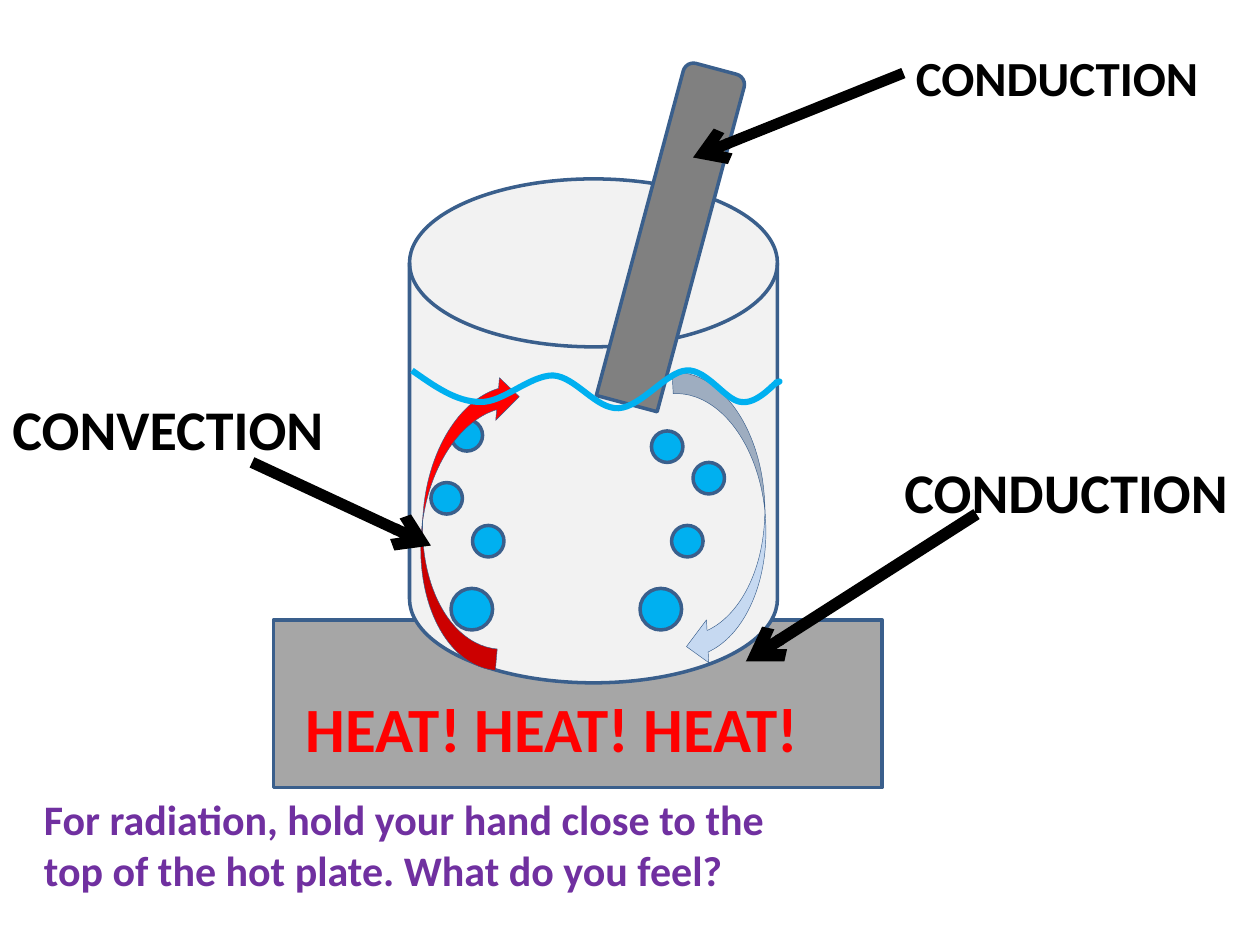
from typing import NamedTuple

from lxml.etree import SubElement
from pptx import Presentation
from pptx.dml.color import RGBColor
from pptx.enum.shapes import MSO_CONNECTOR, MSO_SHAPE
from pptx.enum.text import MSO_AUTO_SIZE
from pptx.oxml.ns import qn
from pptx.util import Inches, Pt

OUTLINE, WATER, BLACK = "3A5F8C", "00B0F0", "000000"


class Part(NamedTuple):
    kind: MSO_SHAPE
    left: float
    top: float
    width: float
    height: float
    fill: str
    rotation: float = 0
    line_width: float = 2


class Pointer(NamedTuple):
    start: tuple[float, float]
    end: tuple[float, float]
    width: float


class Label(NamedTuple):
    text: str
    left: float
    top: float
    width: float
    height: float
    size: float
    color: str = BLACK


def rgb(color: str) -> RGBColor:
    return RGBColor.from_string(color)


def set_line(shape, color: str, width: float) -> None:
    shape.line.color.rgb = rgb(color)
    shape.line.width = Pt(width)


def draw_part(slide, part: Part) -> None:
    box = map(Inches, (part.left, part.top, part.width, part.height))
    shape = slide.shapes.add_shape(part.kind, *box)
    shape.rotation = part.rotation
    shape.shadow.inherit = False
    shape.fill.solid()
    shape.fill.fore_color.rgb = rgb(part.fill)
    set_line(shape, OUTLINE, part.line_width)


def draw_pointer(slide, pointer: Pointer) -> None:
    ends = map(Inches, (*pointer.start, *pointer.end))
    connector = slide.shapes.add_connector(MSO_CONNECTOR.STRAIGHT, *ends)
    set_line(connector, BLACK, pointer.width)
    SubElement(connector.line._get_or_add_ln(), qn("a:tailEnd"), type="arrow")
    SubElement(connector._element.spPr, qn("a:effectLst"))


def draw_label(slide, label: Label) -> None:
    box = map(Inches, (label.left, label.top, label.width, label.height))
    frame = slide.shapes.add_textbox(*box).text_frame
    frame.word_wrap = True
    frame.auto_size = MSO_AUTO_SIZE.SHAPE_TO_FIT_TEXT
    run = frame.paragraphs[0].add_run()
    run.text = label.text
    font_format = {"name": "Calibri", "size": Pt(label.size), "bold": True}
    for name, value in font_format.items():
        setattr(run.font, name, value)
    run.font.color.rgb = rgb(label.color)


def curve_points(start, segments, steps: int = 16) -> list[tuple[float, float]]:
    """Points along a chain of cubic curves."""
    points = [start]
    for first, second, end in segments:
        for step in range(1, steps + 1):
            t = step / steps
            weights = ((1 - t) ** 3, 3 * t * (1 - t) ** 2, 3 * t**2 * (1 - t), t**3)
            corners = (start, first, second, end)
            points.append(tuple(
                sum(w * corner[axis] for w, corner in zip(weights, corners))
                for axis in (0, 1)
            ))
        start = end
    return points


def draw_wave(slide, start, segments) -> None:
    points = curve_points(start, segments)
    scaled = [(Inches(x), Inches(y)) for x, y in points]
    builder = slide.shapes.build_freeform(*scaled[0])
    builder.add_line_segments(scaled[1:], close=False)
    wave = builder.convert_to_shape()
    wave.shadow.inherit = False
    wave.fill.background()
    set_line(wave, WATER, 3.5)


HOT_PLATE = Part(MSO_SHAPE.RECTANGLE, 2.17, 4.92, 4.83, 1.33, "A6A6A6")
BEAKER = Part(MSO_SHAPE.FLOWCHART_MAGNETIC_DISK, 3.25, 1.42, 2.92, 4, "F2F2F2")
ROD = Part(MSO_SHAPE.ROUND_2_SAME_RECTANGLE, 5.08, 0.5, 0.5, 2.75, "808080", 15)
CURRENTS = [
    Part(MSO_SHAPE.CURVED_DOWN_ARROW, 2.52, 3.78, 2.35, 0.68, "FF0000", 275, 0.25),
    Part(MSO_SHAPE.CURVED_DOWN_ARROW, 4.56, 3.77, 2.35, 0.68, "C6D9F1", 87, 0.25),
]
# Left, top and diameter of each bubble
BUBBLES = [
    (3.58, 4.67, 0.33), (3.75, 4.17, 0.25), (3.58, 3.33, 0.25), (3.42, 3.83, 0.25),
    (5.17, 3.42, 0.25), (5.5, 3.67, 0.25), (5.33, 4.17, 0.25), (5.08, 4.67, 0.33),
]
WAVE_START = (3.27, 2.94)
WAVE_SEGMENTS = [
    ((3.44, 3.06), (3.62, 3.19), (3.81, 3.19)),
    ((3.99, 3.2), (4.2, 2.98), (4.39, 2.98)),
    ((4.57, 2.99), (4.73, 3.25), (4.91, 3.24)),
    ((5.09, 3.23), (5.29, 2.95), (5.45, 2.94)),
    ((5.61, 2.93), (5.76, 3.18), (5.88, 3.19)),
    ((6, 3.21), (6.12, 3.07), (6.16, 3.04)),
    ((6.21, 3.02), (6.18, 3.03), (6.15, 3.04)),
]
PLATE_POINTER = Pointer((7.75, 4.08), (5.92, 5.25), 6.75)
CONVECTION_POINTER = Pointer((2, 3.67), (3.42, 4.33), 6.5)
ROD_POINTER = Pointer((7.17, 0.58), (5.5, 1.25), 6.25)
LABELS = [
    Label("CONDUCTION", 7.08, 3.58, 2.92, 0.64, 32),
    Label("HEAT! HEAT! HEAT!", 2.33, 5.42, 5.08, 0.7, 36, "FF0000"),
    Label("CONVECTION", 0, 3.08, 2.83, 0.64, 32),
    Label("CONDUCTION", 7.17, 0.33, 2.5, 0.57, 28),
    Label("For radiation, hold your hand close to the top of the hot plate. "
          "What do you feel?", 0.25, 6.25, 6.08, 0.91, 24, "7030A0"),
]


def main() -> None:
    presentation = Presentation()
    presentation.slide_width = Inches(10)
    presentation.slide_height = Inches(7.5)
    slide = presentation.slides.add_slide(presentation.slide_layouts[6])

    # Hot plate and beaker
    draw_part(slide, HOT_PLATE)
    draw_part(slide, BEAKER)
    draw_pointer(slide, PLATE_POINTER)

    # Bubbles and the currents that carry them
    for left, top, size in BUBBLES:
        draw_part(slide, Part(MSO_SHAPE.FLOWCHART_CONNECTOR, left, top, size, size, WATER))
    for current in CURRENTS:
        draw_part(slide, current)
    draw_pointer(slide, CONVECTION_POINTER)

    # Rod standing in the water
    draw_part(slide, ROD)
    draw_wave(slide, WAVE_START, WAVE_SEGMENTS)
    draw_pointer(slide, ROD_POINTER)

    # Labels
    for label in LABELS:
        draw_label(slide, label)

    presentation.save("out.pptx")


if __name__ == "__main__":
    main()
